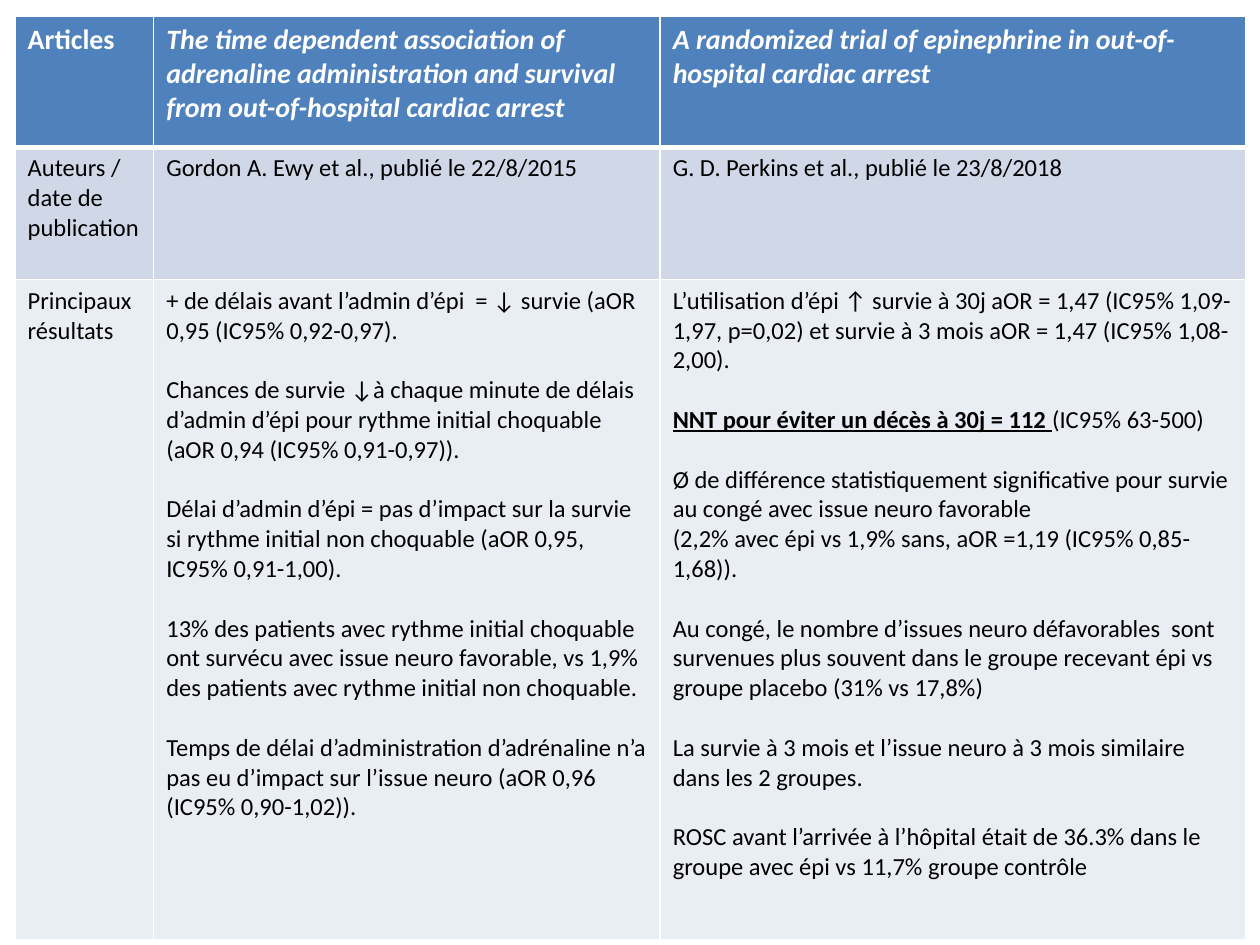
from lxml import etree
from pptx import Presentation
from pptx.dml.color import RGBColor
from pptx.oxml.ns import qn
from pptx.util import Inches, Pt

WHITE = RGBColor(0xFF, 0xFF, 0xFF)
BLACK = RGBColor(0x00, 0x00, 0x00)
HEADER_BLUE = RGBColor(0x4F, 0x81, 0xBD)
BAND_BLUE = RGBColor(0xD0, 0xD8, 0xE8)
PALE_BLUE = RGBColor(0xE9, 0xED, 0xF4)

COLUMN_WIDTHS = [1.1, 4.02, 4.65]
ROW_HEIGHTS = [1.04, 1.05, 5.24]
ROW_FILLS = [HEADER_BLUE, BAND_BLUE, PALE_BLUE]

NNT = "NNT pour éviter un décès à 30j = 112 "

EWY_RESULTS = [
    "+ de délais avant l’admin d’épi  = ↓ survie (aOR 0,95 (IC95% 0,92-0,97).",
    "Chances de survie ↓à chaque minute de délais d’admin d’épi pour rythme initial choquable (aOR 0,94 (IC95% 0,91-0,97)).",
    "Délai d’admin d’épi = pas d’impact sur la survie si rythme initial non choquable (aOR 0,95, IC95% 0,91-1,00).",
    "13% des patients avec rythme initial choquable ont survécu avec issue neuro favorable, vs 1,9% des patients avec rythme initial non choquable.",
    "Temps de délai d’administration d’adrénaline n’a pas eu d’impact sur l’issue neuro (aOR 0,96 (IC95% 0,90-1,02)).",
]
PERKINS_RESULTS = [
    "L’utilisation d’épi ↑ survie à 30j aOR = 1,47 (IC95% 1,09-1,97, p=0,02) et survie à 3 mois aOR = 1,47 (IC95% 1,08-2,00).",
    NNT + "(IC95% 63-500)",
    "Ø de différence statistiquement significative pour survie au congé avec issue neuro favorable\n(2,2% avec épi vs 1,9% sans, aOR =1,19 (IC95% 0,85-1,68)).",
    "Au congé, le nombre d’issues neuro défavorables  sont survenues plus souvent dans le groupe recevant épi vs groupe placebo (31% vs 17,8%)",
    "La survie à 3 mois et l’issue neuro à 3 mois similaire dans les 2 groupes.",
    "ROSC avant l’arrivée à l’hôpital était de 36.3% dans le groupe avec épi vs 11,7% groupe contrôle",
]
ROWS = [
    [
        ["Articles"],
        ["The time dependent association of adrenaline administration and survival from out-of-hospital cardiac arrest"],
        ["A randomized trial of epinephrine in out-of-hospital cardiac arrest"],
    ],
    [
        ["Auteurs / date de publication"],
        ["Gordon A. Ewy et al., publié le 22/8/2015"],
        ["G. D. Perkins et al., publié le 23/8/2018"],
    ],
    [["Principaux résultats"], EWY_RESULTS, PERKINS_RESULTS],
]


def write(paragraph, text, size=14, color=BLACK, bold=False, italic=False, underline=False):
    for index, line in enumerate(text.split("\n")):
        if index:
            paragraph.add_line_break()
        run = paragraph.add_run()
        run.text = line
        run.font.name = "Calibri"
        run.font.size = Pt(size)
        run.font.color.rgb = color
        run.font.bold = bold
        run.font.italic = italic
        run.font.underline = underline


def draw_border(cell, side, width):
    line = etree.SubElement(cell._tc.get_or_add_tcPr(), qn(f"a:ln{side}"), w=str(Pt(width)))
    fill = etree.SubElement(line, qn("a:solidFill"))
    etree.SubElement(fill, qn("a:srgbClr"), val=str(WHITE))


prs = Presentation()
prs.slide_width = Inches(10)
prs.slide_height = Inches(7.5)
slide = prs.slides.add_slide(prs.slide_layouts[6])

articles = slide.shapes.add_table(
    len(ROWS), len(COLUMN_WIDTHS), Inches(0.12), Inches(0.13),
    Inches(sum(COLUMN_WIDTHS)), Inches(sum(ROW_HEIGHTS)),
).table
for column, width in zip(articles.columns, COLUMN_WIDTHS):
    column.width = Inches(width)
for row, height in zip(articles.rows, ROW_HEIGHTS):
    row.height = Inches(height)

for r, row_texts in enumerate(ROWS):
    for c, paragraphs in enumerate(row_texts):
        cell = articles.cell(r, c)
        for side in "LRTB":
            header_edge = (r, side) in [(0, "B"), (1, "T")]
            draw_border(cell, side, 3 if header_edge else 1)
        cell.fill.solid()
        cell.fill.fore_color.rgb = ROW_FILLS[r]

        style = {"size": 16, "color": WHITE, "bold": True, "italic": c > 0} if r == 0 else {}
        for index, text in enumerate(paragraphs):
            frame = cell.text_frame
            paragraph = frame.add_paragraph() if index else frame.paragraphs[0]
            if index:
                paragraph.space_before = Pt(17)
            if text.startswith(NNT):
                write(paragraph, NNT, bold=True, underline=True)
                text = text.removeprefix(NNT)
            write(paragraph, text, **style)

prs.save("out.pptx")
